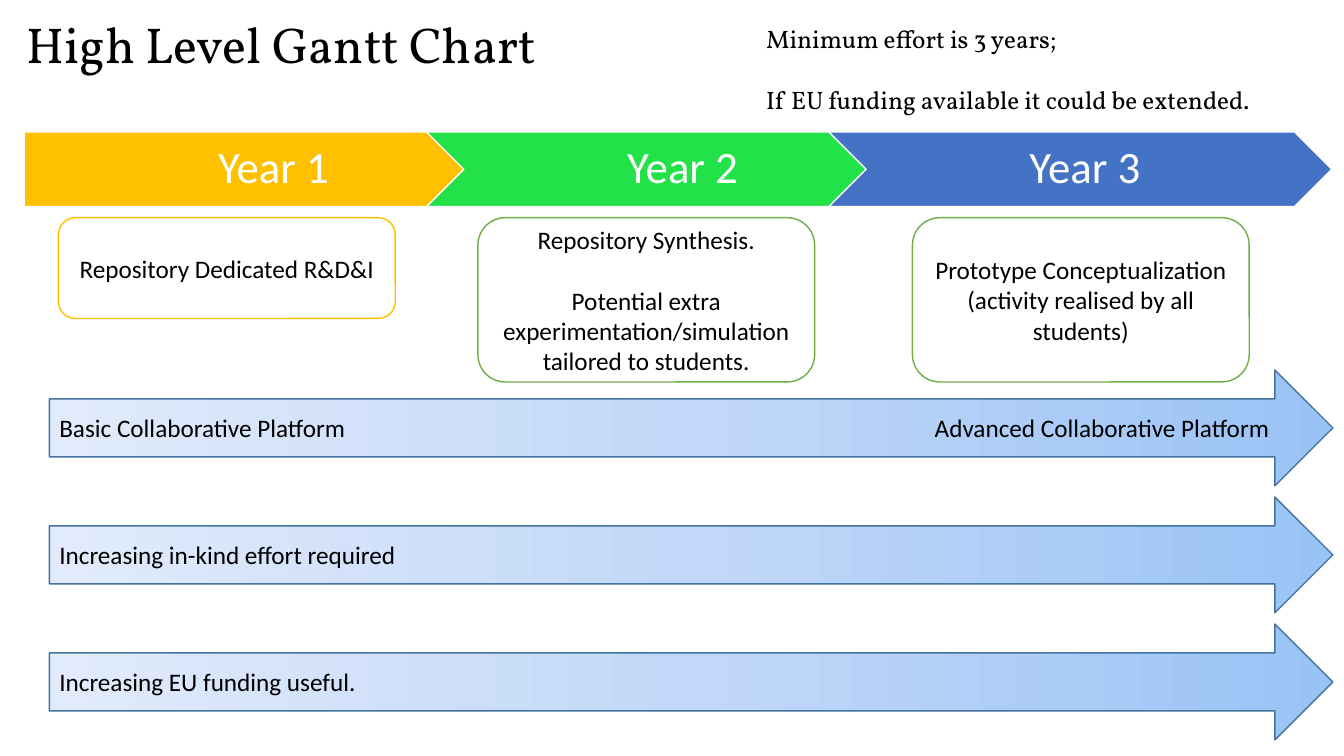
"""Build the high level Gantt chart slide."""
import copy
import dataclasses

import pptx
import pptx.dml.color
import pptx.enum.shapes
import pptx.enum.text
import pptx.oxml
import pptx.oxml.ns
import pptx.util

PX = 9144
TITLE_ONLY = 5
COLORS = {
    "white": "FFFFFF", "black": "000000", "amber": "FFC000", "green": "23E148",
    "blue": "4472C4", "leaf": "70AD47", "steel": "43739E",
    "deep": "9AC3F5", "middle": "C2D8F8", "pale": "E1EBFB",
}
GRADIENT = ((0, "deep"), (0.5, "middle"), (1, "pale"))
SHAPES = pptx.enum.shapes.MSO_SHAPE
ANCHORS = pptx.enum.text.MSO_ANCHOR
ALIGNS = pptx.enum.text.PP_ALIGN
TAB_NAMESPACE = pptx.oxml.ns.nsdecls("a")


@dataclasses.dataclass(frozen=True)
class Place:
    left: int
    top: int
    width: int
    height: int


@dataclasses.dataclass(frozen=True)
class TextStyle:
    font: str
    size: int
    color: str = "black"
    align: ALIGNS = ALIGNS.LEFT
    anchor: ANCHORS = ANCHORS.MIDDLE
    wrap: bool = True
    line_spacing: float = 1.0
    gap: int = 0
    inset: tuple[int, int] = (10, 10)


@dataclasses.dataclass(frozen=True)
class Panel:
    kind: SHAPES
    place: Place
    fill: str
    line: str
    style: TextStyle
    lines: tuple[str, ...]


YEAR = TextStyle("Calibri", 32, "white", ALIGNS.CENTER, line_spacing=0.9, inset=(14, 5))
FIRST_YEAR = dataclasses.replace(YEAR, inset=(19, 5))
TASK = TextStyle("Calibri", 18, align=ALIGNS.CENTER, gap=22)
TREND = TextStyle("Calibri", 18)
TITLE = TextStyle("Vollkorn", 36, anchor=ANCHORS.TOP, wrap=False)
NOTE = TextStyle("Vollkorn", 18, anchor=ANCHORS.TOP, gap=22)

YEARS = (
    (SHAPES.PENTAGON, "amber", FIRST_YEAR),
    (SHAPES.CHEVRON, "green", YEAR),
    (SHAPES.CHEVRON, "blue", YEAR),
)
TASKS = (
    (58, 100, "amber", ("Repository Dedicated R&D&I",)),
    (474, 163, "leaf", (
        "Repository Synthesis.",
        "Potential extra experimentation/simulation tailored to students.",
    )),
    (905, 163, "leaf", ("Prototype Conceptualization (activity realised by all students)",)),
)
TRENDS = (
    "Basic Collaborative Platform\tAdvanced Collaborative Platform",
    "Increasing in-kind effort required",
    "Increasing EU funding useful.",
)


def rgb(name: str) -> pptx.dml.color.RGBColor:
    return pptx.dml.color.RGBColor.from_string(COLORS[name])


def bounds(place: Place) -> tuple[int, ...]:
    return tuple(value * PX for value in dataclasses.astuple(place))


def apply(target: object, values: dict[str, object]) -> None:
    for name, value in values.items():
        setattr(target, name, value)


def write(box: pptx.shapes.base.BaseShape, lines: tuple[str, ...], style: TextStyle) -> None:
    frame = box.text_frame
    left, right = style.inset
    apply(frame, {
        "auto_size": pptx.enum.text.MSO_AUTO_SIZE.NONE,
        "word_wrap": style.wrap, "vertical_anchor": style.anchor,
        "margin_left": left * PX, "margin_right": right * PX,
        "margin_top": 5 * PX, "margin_bottom": 5 * PX,
    })
    for index, line in enumerate(lines):
        para = frame.add_paragraph() if index else frame.paragraphs[0]
        apply(para, {
            "alignment": style.align, "line_spacing": style.line_spacing,
            "space_before": pptx.util.Pt(style.gap if index else 0),
        })
        span = para.add_run()
        span.text = line
        apply(span.font, {"name": style.font, "size": pptx.util.Pt(style.size)})
        span.font.color.rgb = rgb(style.color)
        if "\t" in line:
            add_right_tab(para, 1200)


def add_right_tab(para: pptx.text.text._Paragraph, position: int) -> None:
    properties = para._p.get_or_add_pPr()
    properties.append(pptx.oxml.parse_xml(
        f'<a:tabLst {TAB_NAMESPACE}><a:tab pos="{position * PX}" algn="r"/></a:tabLst>'
    ))


def paint_gradient(box: pptx.shapes.autoshape.Shape) -> None:
    box.fill.gradient()
    box.fill.gradient_angle = 180
    stops = box.element.spPr.find(".//" + pptx.oxml.ns.qn("a:gsLst"))
    stops.append(copy.deepcopy(stops[0]))
    for stop, (position, color) in zip(box.fill.gradient_stops, GRADIENT):
        stop.position = position
        stop.color.rgb = rgb(color)


def draw_panel(page: pptx.slide.Slide, panel: Panel) -> None:
    box = page.shapes.add_shape(panel.kind, *bounds(panel.place))
    box.shadow.inherit = False
    if panel.fill == "gradient":
        paint_gradient(box)
    else:
        box.fill.solid()
        box.fill.fore_color.rgb = rgb(panel.fill)
    box.line.color.rgb = rgb(panel.line)
    box.line.width = pptx.util.Pt(1)
    write(box, panel.lines, panel.style)


def gantt_panels() -> list[Panel]:
    years = [
        Panel(kind, Place(24 + 399 * index, 131, 499, 74), fill, "white", style,
              (f"Year {index + 1}",))
        for index, (kind, fill, style) in enumerate(YEARS)
    ]
    tasks = [
        Panel(SHAPES.ROUNDED_RECTANGLE, Place(left, 216, 334, height), "white", line, TASK, lines)
        for left, height, line, lines in TASKS
    ]
    trends = [
        Panel(SHAPES.RIGHT_ARROW, Place(49, 367 + 126 * index, 1273, 115), "gradient", "steel",
              TREND, (text,))
        for index, text in enumerate(TRENDS)
    ]
    return years + tasks + trends


def main() -> None:
    deck = pptx.Presentation()
    apply(deck, {"slide_width": 1333 * PX, "slide_height": 750 * PX})
    page = deck.slides.add_slide(deck.slide_layouts[TITLE_ONLY])
    title = page.shapes.title
    apply(title, dict(zip(("left", "top", "width", "height"), bounds(Place(16, 8, 547, 71)))))
    write(title, ("High Level Gantt Chart",), TITLE)
    for panel in gantt_panels():
        draw_panel(page, panel)
    note = page.shapes.add_textbox(*bounds(Place(750, 18, 583, 101)))
    write(note, (
        "Minimum effort is 3 years;",
        "If EU funding available it could be extended.",
    ), NOTE)
    deck.save("out.pptx")


if __name__ == "__main__":
    main()
